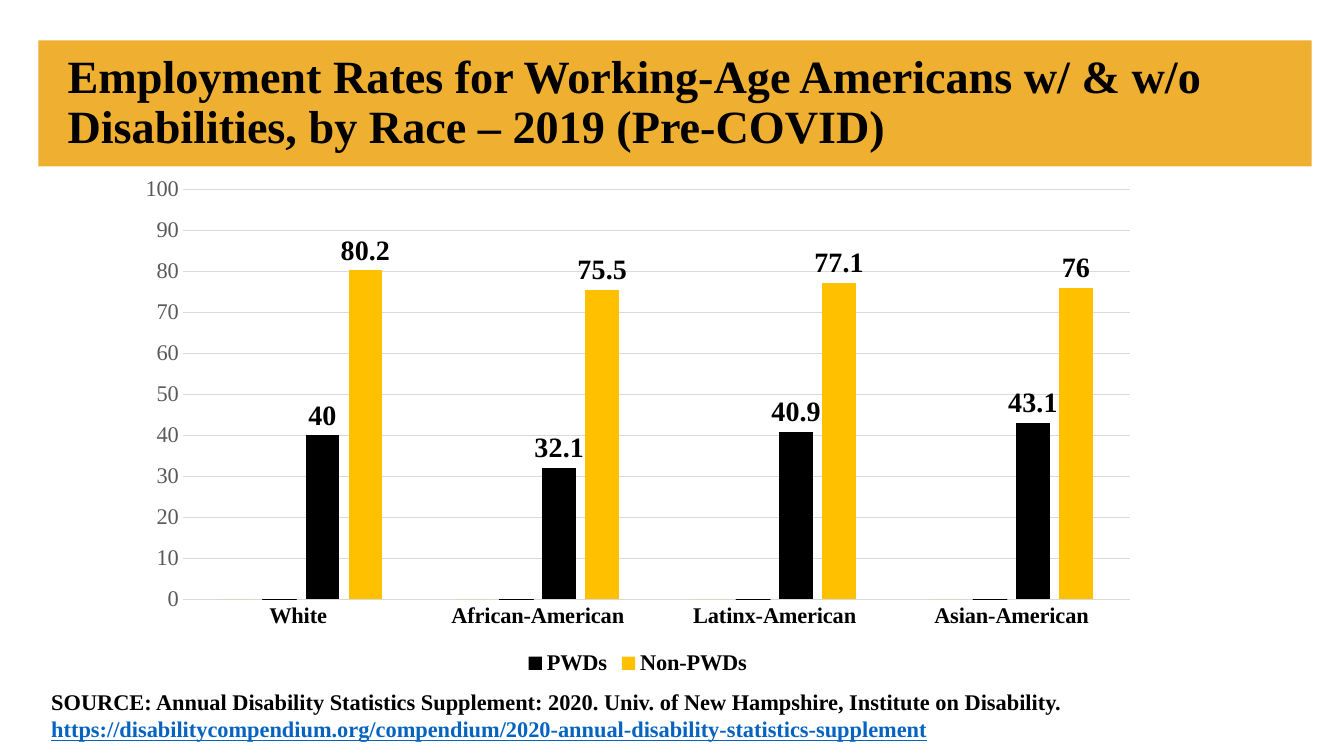
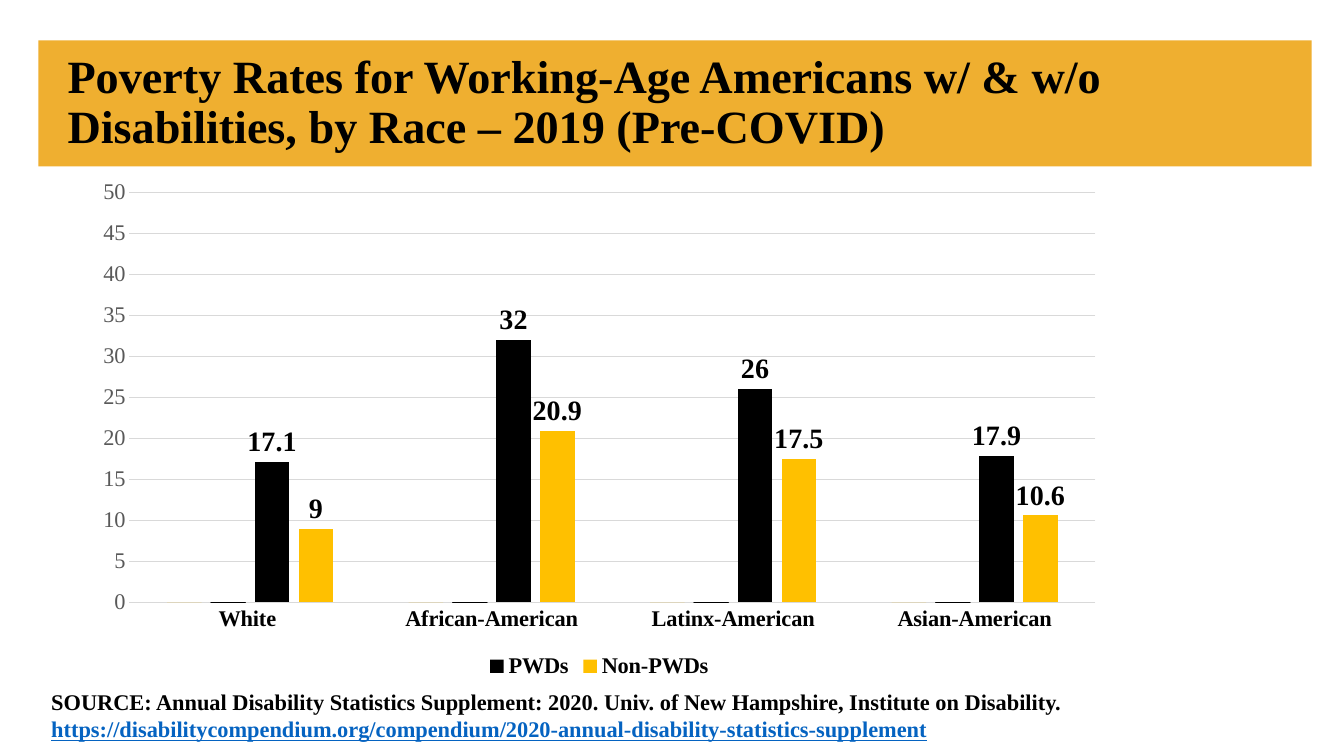
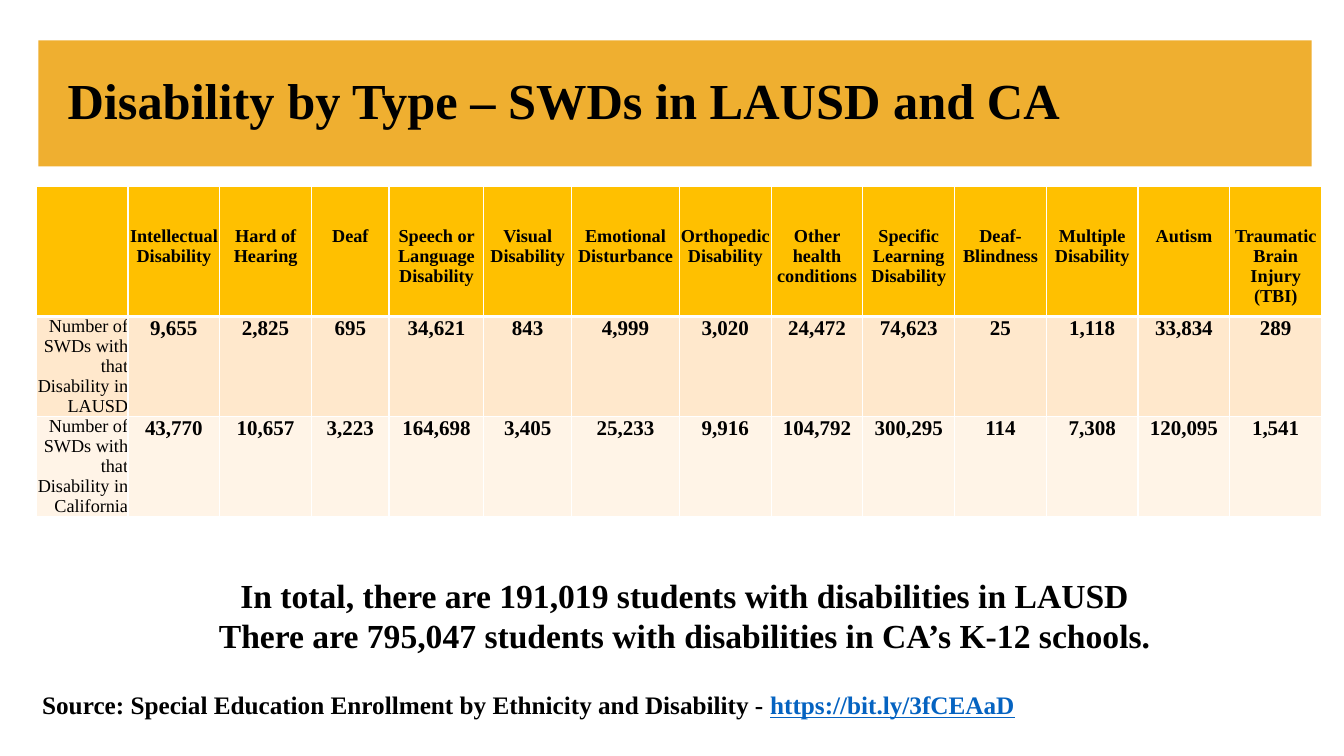
from lxml import etree
from pptx import Presentation
from pptx.chart.data import CategoryChartData
from pptx.dml.color import RGBColor
from pptx.enum.chart import XL_CHART_TYPE as ChartType
from pptx.enum.chart import XL_LABEL_POSITION as LabelPosition
from pptx.enum.chart import XL_LEGEND_POSITION as LegendPosition
from pptx.enum.chart import XL_TICK_MARK as TickMark
from pptx.enum.shapes import MSO_SHAPE as Shape
from pptx.enum.text import MSO_ANCHOR as Anchor
from pptx.enum.text import MSO_AUTO_SIZE as AutoSize
from pptx.enum.text import PP_ALIGN as Align
from pptx.oxml import parse_xml
from pptx.oxml.ns import nsdecls, qn
from pptx.util import Inches, Pt

FONT = "Times New Roman"
BLACK = RGBColor(0x00, 0x00, 0x00)
GREY = RGBColor(0x59, 0x59, 0x59)
LIGHT_GREY = RGBColor(0xD9, 0xD9, 0xD9)
BAND_GOLD = RGBColor(0xEF, 0xAF, 0x30)
GOLD = RGBColor(0xFF, 0xC0, 0x00)
PEACH = RGBColor(0xFF, 0xE8, 0xCC)
CREAM = RGBColor(0xFF, 0xF4, 0xE7)
LINK_BLUE = RGBColor(0x05, 0x63, 0xC1)


def style_font(font, size, color=BLACK, bold=True):
    font.name = FONT
    font.size = Pt(size)
    font.bold = bold
    font.color.rgb = color


def write_lines(frame, lines, size, align=Align.LEFT, bold=True):
    frame.word_wrap = True
    for number, line in enumerate(lines):
        paragraph = frame.paragraphs[0] if number == 0 else frame.add_paragraph()
        paragraph.alignment = align
        for text in line:
            run = paragraph.add_run()
            run.text = text
            is_address = text.startswith("https://")
            style_font(run.font, size, LINK_BLUE if is_address else BLACK, bold)
            if is_address:
                run.font.underline = True


prs = Presentation()
prs.slide_width = Inches(13.33)
prs.slide_height = Inches(7.5)
layout = prs.slide_layouts[5]

titles = [
    ("Employment Rates for Working-Age Americans w/ & w/o Disabilities, by Race – 2019 (Pre-COVID)", 33),
    ("Poverty Rates for Working-Age Americans w/ & w/o Disabilities, by Race – 2019 (Pre-COVID)", 33),
    ("Disability by Type – SWDs in LAUSD and CA", 36),
]
slides = []
for heading, size in titles:
    slide = prs.slides.add_slide(layout)
    title = slide.shapes.title
    title.left, title.top = Inches(0.57), Inches(0.4)
    title.width, title.height = Inches(11.5), Inches(1.25)
    title.text_frame.vertical_anchor = Anchor.MIDDLE
    title.text_frame.auto_size = AutoSize.NONE
    write_lines(title.text_frame, [[heading]], size)
    title.text_frame.paragraphs[0].line_spacing = 0.9
    slides.append(slide)

band = slides[0].shapes.add_shape(
    Shape.RECTANGLE, Inches(0.38), Inches(0.4), Inches(12.63), Inches(1.25))
band.shadow.inherit = False
band.fill.solid()
band.fill.fore_color.rgb = BAND_GOLD
band.line.fill.background()
band.element.nvSpPr.cNvPr.set("id", "20")
layout.shapes[0].element.addprevious(band.element)

races = ["White ", "African-American", "Latinx-American", "Asian-American"]
rate_charts = [
    (1.24, 1.65, 10.17, 100, [40, 32.1, 40.9, 43.1], [80.2, 75.5, 77.1, 76]),
    (0.82, 1.68, 10.25, 50, [17.1, 32, 26, 17.9], [9, 20.9, 17.5, 10.6]),
]
for slide, (left, top, width, maximum, pwds, non_pwds) in zip(slides, rate_charts):
    citation = slide.shapes.add_textbox(
        Inches(0.41), Inches(6.78), Inches(12.92), Inches(0.91)).text_frame
    citation.auto_size = AutoSize.SHAPE_TO_FIT_TEXT
    write_lines(citation, [
        ["SOURCE: Annual Disability Statistics Supplement: 2020. "
         "Univ. of New Hampshire, Institute on Disability."],
        ["https://disabilitycompendium.org/compendium/2020-annual-disability-statistics-supplement"],
    ], 16)

    rates = CategoryChartData()
    rates.categories = races
    rates.add_series("Series 1", [0] * 4)
    rates.add_series("Series 2", [0] * 4)
    rates.add_series("PWDs", pwds)
    rates.add_series("Non-PWDs", non_pwds)
    chart = slide.shapes.add_chart(
        ChartType.COLUMN_CLUSTERED, Inches(left), Inches(top),
        Inches(width), Inches(5.1), rates).chart
    chart.has_title = False
    style_font(chart.font, 14, bold=False)

    plot = chart.plots[0]
    plot.gap_width = 219
    plot.overlap = -27
    plot.vary_by_categories = False
    for series, color in zip(plot.series, [GOLD, BLACK, BLACK, GOLD]):
        series.format.fill.solid()
        series.format.fill.fore_color.rgb = color
        series.format.line.fill.background()
        if series.name == "Series 2":
            series.format.line.color.rgb = BLACK
            series.format.line.width = Pt(0.75)
        if series.name.endswith("PWDs"):
            labels = series.data_labels
            labels.show_value = True
            labels.position = LabelPosition.OUTSIDE_END
            style_font(labels.font, 20)

    race_axis = chart.category_axis
    race_axis.major_tick_mark = TickMark.NONE
    race_axis.format.line.color.rgb = LIGHT_GREY
    race_axis.format.line.width = Pt(0.75)
    style_font(race_axis.tick_labels.font, 16)

    rate_axis = chart.value_axis
    rate_axis.minimum_scale = 0
    rate_axis.maximum_scale = maximum
    rate_axis.major_unit = maximum / 10
    rate_axis.major_tick_mark = TickMark.NONE
    rate_axis.format.line.fill.background()
    rate_axis.major_gridlines.format.line.color.rgb = LIGHT_GREY
    rate_axis.major_gridlines.format.line.width = Pt(0.75)
    style_font(rate_axis.tick_labels.font, 16, GREY, False)

    chart.has_legend = True
    legend = chart.legend
    legend.position = LegendPosition.BOTTOM
    legend.include_in_layout = False
    style_font(legend.font, 16)
    legend_xml = chart.element.find(".//" + qn("c:legend"))
    for place in (0, 1):
        legend_xml.insert(place + 1, parse_xml(
            f'<c:legendEntry {nsdecls("c")}><c:idx val="{place}"/>'
            '<c:delete val="1"/></c:legendEntry>'))

disabilities = [
    "", "Intellectual Disability", "Hard of Hearing", "Deaf",
    "Speech or Language\nDisability", "Visual Disability",
    "Emotional Disturbance", "Orthopedic Disability", "Other health conditions",
    "Specific Learning Disability", "Deaf-Blindness", "Multiple Disability",
    "Autism", "Traumatic Brain Injury (TBI)",
]
lausd = [
    "Number of SWDs with that Disability in LAUSD", "9,655", "2,825", "695",
    "34,621", "843", "4,999", "3,020", "24,472", "74,623", "25", "1,118",
    "33,834", "289",
]
california = [
    "Number of SWDs with that Disability in California", "43,770", "10,657",
    "3,223", "164,698", "3,405", "25,233", "9,916", "104,792", "300,295",
    "114", "7,308", "120,095", "1,541",
]
column_widths = [0.91] * 3 + [0.77, 0.94, 0.87, 1.07] + [0.91] * 7
row_heights = [1.29, 0.99, 0.99]

enrollment_slide = slides[2]
enrollment = enrollment_slide.shapes.add_table(
    3, 14, Inches(0.36), Inches(1.85), Inches(12.8), Inches(sum(row_heights))).table
for column, width in zip(enrollment.columns, column_widths):
    column.width = Inches(width)
for row, height in zip(enrollment.rows, row_heights):
    row.height = Inches(height)

for r, (entries, fill) in enumerate(
        [(disabilities, GOLD), (lausd, PEACH), (california, CREAM)]):
    for c, entry in enumerate(entries):
        cell = enrollment.cell(r, c)
        cell.margin_left = cell.margin_right = cell.margin_bottom = 0
        cell.margin_top = Inches(0.4) if r == 0 else 0
        borders = cell._tc.get_or_add_tcPr()
        for side in ("lnL", "lnR", "lnT", "lnB"):
            thick = (r, side) in ((0, "lnB"), (1, "lnT"))
            edge = etree.SubElement(borders, qn("a:" + side), w=str(Pt(3 if thick else 1)))
            paint = etree.SubElement(edge, qn("a:solidFill"))
            etree.SubElement(paint, qn("a:srgbClr"), val="FFFFFF")
        cell.fill.solid()
        cell.fill.fore_color.rgb = fill
        if entry:
            is_row_label = c == 0
            write_lines(
                cell.text_frame, [[line] for line in entry.split("\n")],
                13 if r == 0 or is_row_label else 15,
                Align.RIGHT if is_row_label else Align.CENTER,
                not is_row_label)

totals = enrollment_slide.shapes.add_textbox(
    Inches(0.57), Inches(5.65), Inches(12.44), Inches(0.91)).text_frame
totals.auto_size = AutoSize.SHAPE_TO_FIT_TEXT
write_lines(totals, [
    ["In total, there are 191,019 students with disabilities in LAUSD"],
    ["There are 795,047 students with disabilities in CA’s K-12 schools."],
], 24, Align.CENTER)

enrollment_source = enrollment_slide.shapes.add_textbox(
    Inches(0.32), Inches(6.79), Inches(10.17), Inches(0.4)).text_frame
enrollment_source.auto_size = AutoSize.SHAPE_TO_FIT_TEXT
write_lines(enrollment_source, [
    ["Source: Special Education Enrollment by Ethnicity and Disability - ",
     "https://bit.ly/3fCEAaD"],
], 18)

prs.save("out.pptx")
